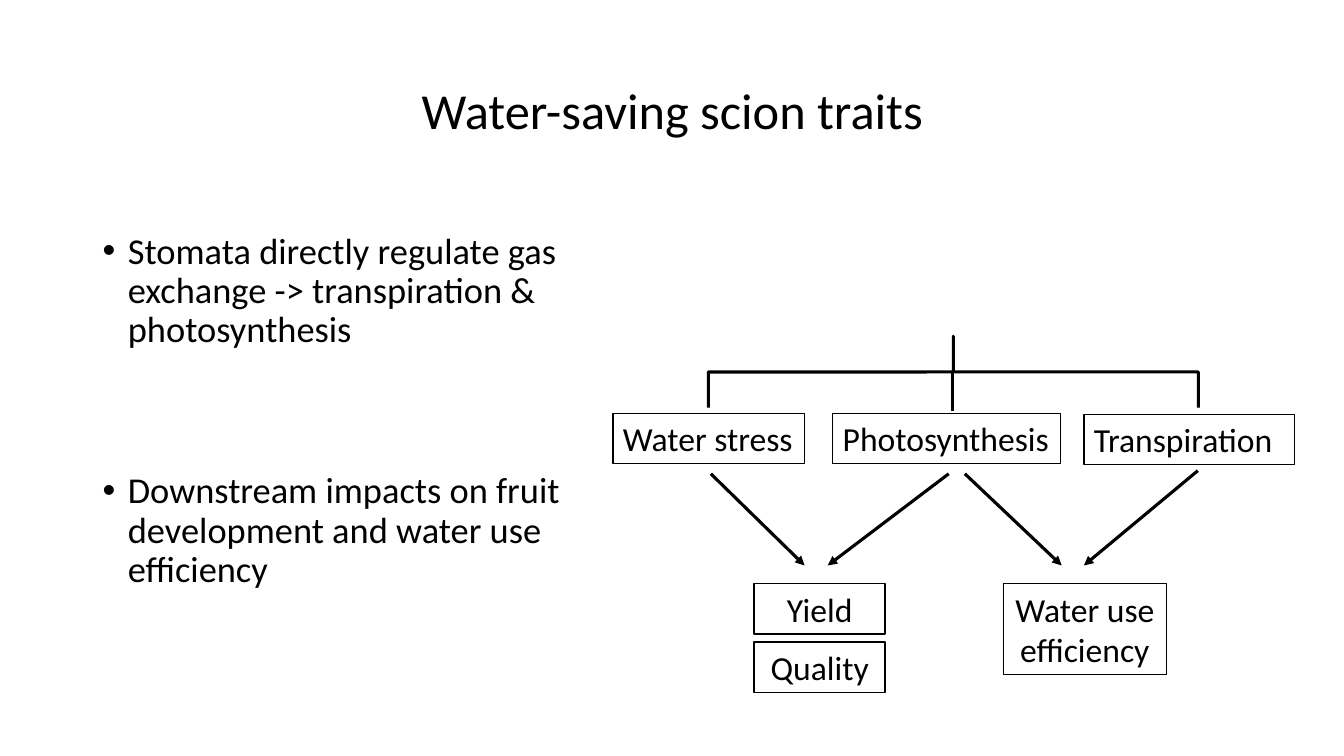
import pptx
import pptx.dml.color
import pptx.enum.dml
import pptx.enum.shapes
import pptx.enum.text
import pptx.oxml.ns
import pptx.util
from dataclasses import dataclass
from lxml import etree

PX = 9144  # EMU in one px, 100 px to the inch
SHAPES = pptx.enum.shapes.MSO_SHAPE
ALIGN = pptx.enum.text.PP_ALIGN
ANCHOR = pptx.enum.text.MSO_ANCHOR
FIT = pptx.enum.text.MSO_AUTO_SIZE


@dataclass(frozen=True)
class Theme:
    font: str = "Calibri"
    ink: str = "000000"
    paper: str = "FFFFFF"
    title_size: int = 36
    body_size: int = 26
    label_size: int = 24
    box_line: float = 1
    link_line: float = 2.25


THEME = Theme()


def px(*lengths):
    return [pptx.util.Emu(length * PX) for length in lengths]


def rgb(value):
    return pptx.dml.color.RGBColor.from_string(value)


def apply_format(target, values):
    for name, value in values.items():
        setattr(target, name, value)


def write(frame, paragraphs, size, **frame_format):
    """Fill a text frame with (text, paragraph format) pairs."""
    apply_format(frame, {"word_wrap": True, **frame_format})
    for index, (text, paragraph_format) in enumerate(paragraphs):
        paragraph = frame.paragraphs[0] if index == 0 else frame.add_paragraph()
        apply_format(paragraph, paragraph_format)
        run = paragraph.add_run()
        run.text = text
        apply_format(run.font, {"name": THEME.font, "size": pptx.util.Pt(size)})
        run.font.color.rgb = rgb(THEME.ink)


def outline(shape, width):
    shape.shadow.inherit = False
    shape.fill.solid()
    shape.fill.fore_color.rgb = rgb(THEME.paper)
    shape.line.color.rgb = rgb(THEME.ink)
    shape.line.width = pptx.util.Pt(width)


def add_label(slide, box, text, align):
    label = slide.shapes.add_shape(SHAPES.RECTANGLE, *px(*box))
    outline(label, THEME.box_line)
    write(label.text_frame, [(text, {"alignment": align})], THEME.label_size,
          vertical_anchor=ANCHOR.TOP, auto_size=FIT.SHAPE_TO_FIT_TEXT)


def add_link(slide, start, end, arrow=True):
    link = slide.shapes.add_connector(
        pptx.enum.shapes.MSO_CONNECTOR.STRAIGHT, *px(*start, *end))
    link.line.color.rgb = rgb(THEME.ink)
    link.line.width = pptx.util.Pt(THEME.link_line)
    if arrow:
        etree.SubElement(link.line._get_or_add_ln(),
                         pptx.oxml.ns.qn("a:tailEnd"), type="triangle")
    etree.SubElement(link._element.spPr, pptx.oxml.ns.qn("a:effectLst"))


def draw_title(slide, box, text):
    title = slide.shapes.add_textbox(*px(*box))
    write(title.text_frame, [(text, {"alignment": ALIGN.CENTER, "line_spacing": 0.9})],
          THEME.title_size, vertical_anchor=ANCHOR.MIDDLE)


def draw_points(slide, box, points):
    """Bulleted points, each given with its space before in points."""
    body = slide.shapes.add_textbox(*px(*box))
    write(body.text_frame,
          [(text, {"line_spacing": 0.9, "space_before": pptx.util.Pt(gap)})
           for text, gap in points], THEME.body_size)
    indent = 25 * PX
    for paragraph in body.text_frame.paragraphs:
        properties = paragraph._p.get_or_add_pPr()
        properties.set("marL", str(indent))
        properties.set("indent", str(-indent))
        etree.SubElement(properties, pptx.oxml.ns.qn("a:buFont"), typeface="Arial")
        etree.SubElement(properties, pptx.oxml.ns.qn("a:buChar"), char="•")


def draw_trait_diagram(slide, box):
    left, top, width, height = box

    def at(x, y):
        return left + x, top + y

    # Processes: x, y, width
    for text, x, y, label_width in (("Water stress", 0, 76, 190),
                                    ("Transpiration", 467, 77, 209),
                                    ("Photosynthesis", 218, 76, 226)):
        add_label(slide, (*at(x, y), label_width, 50), text, ALIGN.LEFT)

    # Arrows from processes to outcomes
    arrow_tip = 227
    for start, tip_x in (((97, 136), 190), ((333, 136), 213),
                         ((349, 136), 445), ((580, 133), 467)):
        add_link(slide, at(*start), at(tip_x, arrow_tip))

    # Outcomes: x, y, width, height
    for text, x, y, *size in (("Yield", 140, 245, 130, 50),
                              ("Quality", 140, 303, 130, 50),
                              ("Water use efficiency", 387, 245, 162, 90)):
        add_label(slide, (*at(x, y), *size), text, ALIGN.CENTER)

    # Square bracket over the processes, turned to open downwards
    depth, span = 71, 486
    middle_x, middle_y = at(337, 35)
    bracket = slide.shapes.add_shape(
        SHAPES.LEFT_BRACE,
        *px(middle_x - depth // 2, middle_y - span // 2, depth, span))
    bracket.rotation = 90
    bracket.adjustments[0] = 0
    bracket.adjustments[1] = 0.5
    outline(bracket, THEME.link_line)
    add_link(slide, (middle_x, middle_y + 1), (middle_x, middle_y + 39), arrow=False)


def main():
    deck = pptx.Presentation()
    deck.slide_width, deck.slide_height = px(1333, 750)
    slide = deck.slides.add_slide(deck.slide_layouts[6])
    slide.background.fill.solid()
    slide.background.fill.fore_color.rgb = rgb(THEME.paper)

    draw_title(slide, (92, 40, 1150, 145), "Water-saving scion traits")
    draw_points(slide, (92, 226, 503, 484), [
        ("Stomata directly regulate gas exchange -> transpiration & photosynthesis", 10),
        ("Downstream impacts on fruit development and water use efficiency", 87),
    ])
    draw_trait_diagram(slide, (608, 334, 676, 353))
    deck.save("out.pptx")


if __name__ == "__main__":
    main()
